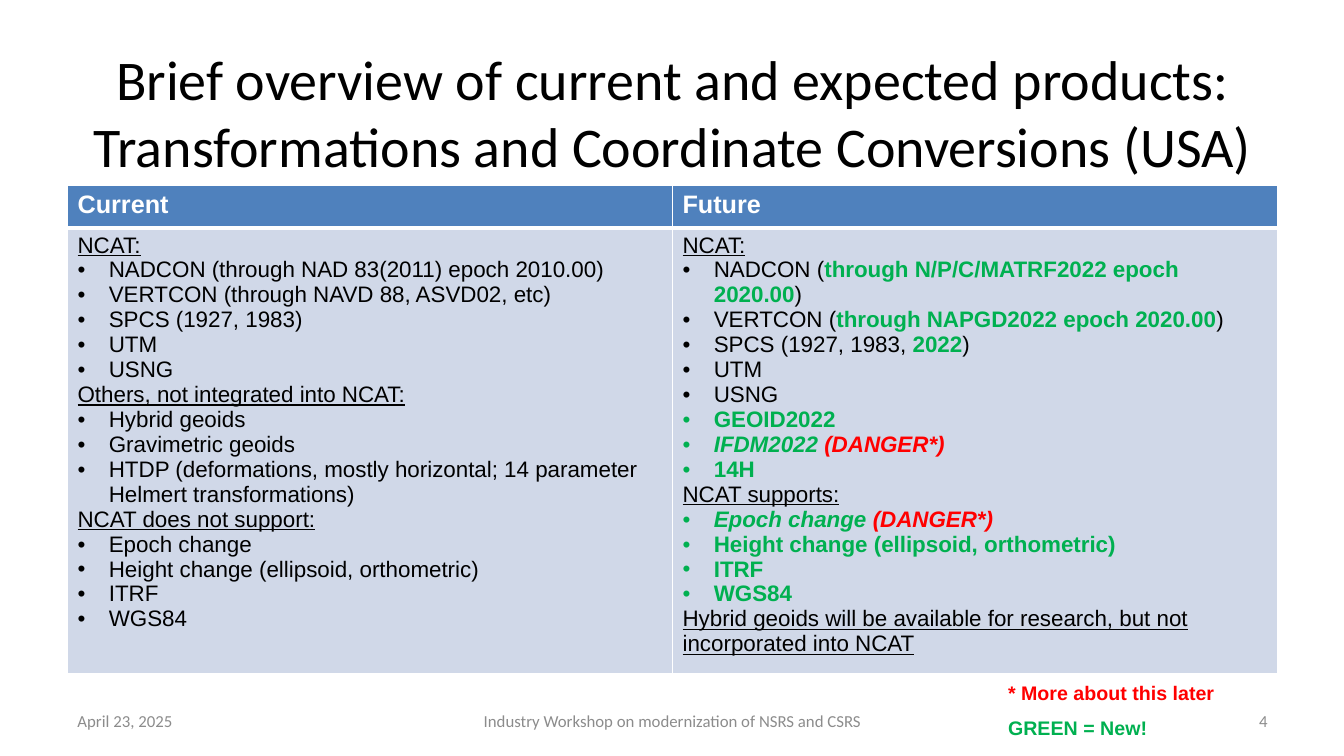
from lxml import etree
from pptx import Presentation
from pptx import util as u
from pptx.dml.color import RGBColor
from pptx.enum import text
from pptx.oxml.ns import qn

PX = 9144  # 100 px to the inch
INDENT = 31
LIST_SIZE = 16
LIST_PITCH = 17.8  # points from line to line
COLORS = {"black": "000000", "white": "FFFFFF", "grey": "8C8C8C", "green": "00B050",
          "red": "FF0000", "header": "4F81BD", "body": "D0D8E8"}

# Each style: colour, bold, italic, underline
STYLES = {"plain": ("black", False, False, False),
          "heading": ("black", False, False, True),
          "header": ("white", True, False, False),
          "footer": ("grey", False, False, False),
          "new": ("green", True, False, False),
          "new_italic": ("green", True, True, False),
          "alert": ("red", True, False, False),
          "danger": ("red", True, True, False)}

# Each section: heading, bullets. A bullet is a list of (text, style) runs.
CURRENT = [
    ("NCAT:", [[(item, "plain")] for item in (
        "NADCON (through NAD 83(2011) epoch 2010.00)",
        "VERTCON (through NAVD 88, ASVD02, etc)",
        "SPCS (1927, 1983)", "UTM", "USNG")]),
    ("Others, not integrated into NCAT:", [[(item, "plain")] for item in (
        "Hybrid geoids", "Gravimetric geoids",
        "HTDP (deformations, mostly horizontal; 14 parameter Helmert transformations)")]),
    ("NCAT does not support:", [[(item, "plain")] for item in (
        "Epoch change", "Height change (ellipsoid, orthometric)", "ITRF", "WGS84")]),
]
FUTURE = [
    ("NCAT:", [
        [("NADCON (", "plain"), ("through N/P/C/MATRF2022 epoch 2020.00", "new"), (")", "plain")],
        [("VERTCON (", "plain"), ("through NAPGD2022 epoch 2020.00", "new"), (")", "plain")],
        [("SPCS (1927, 1983, ", "plain"), ("2022", "new"), (")", "plain")],
        [("UTM", "plain")],
        [("USNG", "plain")],
        [("GEOID2022", "new")],
        [("IFDM2022", "new_italic"), (" (DANGER*)", "danger")],
        [("14H", "new")]]),
    ("NCAT supports:", [
        [("Epoch change ", "new_italic"), ("(DANGER*)", "danger")],
        [("Height change (ellipsoid, orthometric)", "new")],
        [("ITRF", "new")],
        [("WGS84", "new")]]),
    ("Hybrid geoids will be available for research, but not incorporated into NCAT", []),
]


def rgb(name):
    return RGBColor.from_string(COLORS[name])


def px(*lengths):
    return [u.Emu(n * PX) for n in lengths]


def add_run(p, words, style, size, font="Arial"):
    r = p.add_run()
    r.text = words
    color, r.font.bold, r.font.italic, r.font.underline = STYLES[style]
    r.font.color.rgb = rgb(color)
    r.font.size, r.font.name = u.Pt(size), font


def add_bullet(p):
    pPr = p._p.get_or_add_pPr()
    pPr.set("marL", str(INDENT * PX))
    pPr.set("indent", str(-INDENT * PX))
    etree.SubElement(pPr, qn("a:buFont")).set("typeface", "Arial")
    etree.SubElement(pPr, qn("a:buChar")).set("char", "•")


def end_paragraph(p, size):
    """Give the paragraph mark the size of the text, so that it adds no height."""
    mark = etree.SubElement(p._p, qn("a:endParaRPr"))
    mark.set("sz", str(size * 100))
    etree.SubElement(mark, qn("a:latin")).set("typeface", "Arial")


def fill_sections(tf, sections):
    paragraphs = []
    for heading, bullets in sections:
        paragraphs.append(([(heading, "heading")], False))
        paragraphs += [(runs, True) for runs in bullets]
    for i, (runs, bulleted) in enumerate(paragraphs):
        p = tf.add_paragraph() if i else tf.paragraphs[0]
        if bulleted:
            add_bullet(p)
        p.line_spacing = u.Pt(LIST_PITCH)
        for words, style in runs:
            add_run(p, words, style, LIST_SIZE)
        end_paragraph(p, LIST_SIZE)


def set_borders(cell, **widths):
    """Draw white borders; widths are points by side, in the order L, R, T, B."""
    tcPr = cell._tc.get_or_add_tcPr()
    for i, (side, width) in enumerate(widths.items()):
        line = etree.Element(qn("a:ln" + side), w=str(u.Pt(width)))
        fill = etree.SubElement(line, qn("a:solidFill"))
        etree.SubElement(fill, qn("a:srgbClr")).set("val", COLORS["white"])
        tcPr.insert(i, line)


def add_title(s, box):
    sp = s.shapes.title
    sp.left, sp.top, sp.width, sp.height = px(*box)
    tf = sp.text_frame
    tf.vertical_anchor = text.MSO_ANCHOR.MIDDLE
    tf.paragraphs[0].alignment = text.PP_ALIGN.CENTER
    add_run(tf.paragraphs[0], "Brief overview of current and expected products: "
            "Transformations and Coordinate Conversions (USA)", "plain", 40, "Calibri")


def add_comparison(s, box):
    header_height = 42
    table = s.shapes.add_table(2, 2, *px(*box)).table
    table.rows[0].height, table.rows[1].height = px(header_height, box[3] - header_height)
    for col, (name, sections) in enumerate((("Current", CURRENT), ("Future", FUTURE))):
        head, body = table.cell(0, col), table.cell(1, col)
        for cell, color in ((head, "header"), (body, "body")):
            cell.fill.solid()
            cell.fill.fore_color.rgb = rgb(color)
        set_borders(head, L=1, R=1, T=1, B=3)
        set_borders(body, L=1, R=1, T=3, B=1)
        add_run(head.text_frame.paragraphs[0], name, "header", 18)
        fill_sections(body.text_frame, sections)


def add_label(s, box, words, style, size, font="Arial", align=text.PP_ALIGN.LEFT,
              anchor=text.MSO_ANCHOR.TOP):
    tf = s.shapes.add_textbox(*px(*box)).text_frame
    tf.word_wrap, tf.vertical_anchor = True, anchor
    tf.paragraphs[0].alignment = align
    add_run(tf.paragraphs[0], words, style, size, font)


def add_footer(s, box):
    left, top, width, height = box
    side, middle = 311, 422
    for x, w, words, align in (
            (left, side, "April 23, 2025", text.PP_ALIGN.LEFT),
            (left + (width - middle) // 2, middle,
             "Industry Workshop on modernization of NSRS and CSRS", text.PP_ALIGN.CENTER),
            (left + width - side, side, "4", text.PP_ALIGN.RIGHT)):
        add_label(s, (x, top, w, height), words, "footer", 12, "Calibri", align,
                  text.MSO_ANCHOR.MIDDLE)


def add_legend(s, box):
    left, top, width, height = box
    row = height // 2
    for i, (words, style) in enumerate((("* More about this later", "alert"),
                                        ("GREEN = New!", "new"))):
        add_label(s, (left, top + i * row, width, row), words, style, 14)


def main():
    prs = Presentation()
    prs.slide_width, prs.slide_height = px(1333, 750)
    s = prs.slides.add_slide(prs.slide_layouts[5])
    add_title(s, (67, 48, 1200, 125))
    add_footer(s, (67, 695, 1200, 40))
    add_comparison(s, (67, 184, 1200, 484))
    add_legend(s, (990, 671, 276, 68))
    prs.save("out.pptx")


if __name__ == "__main__":
    main()
